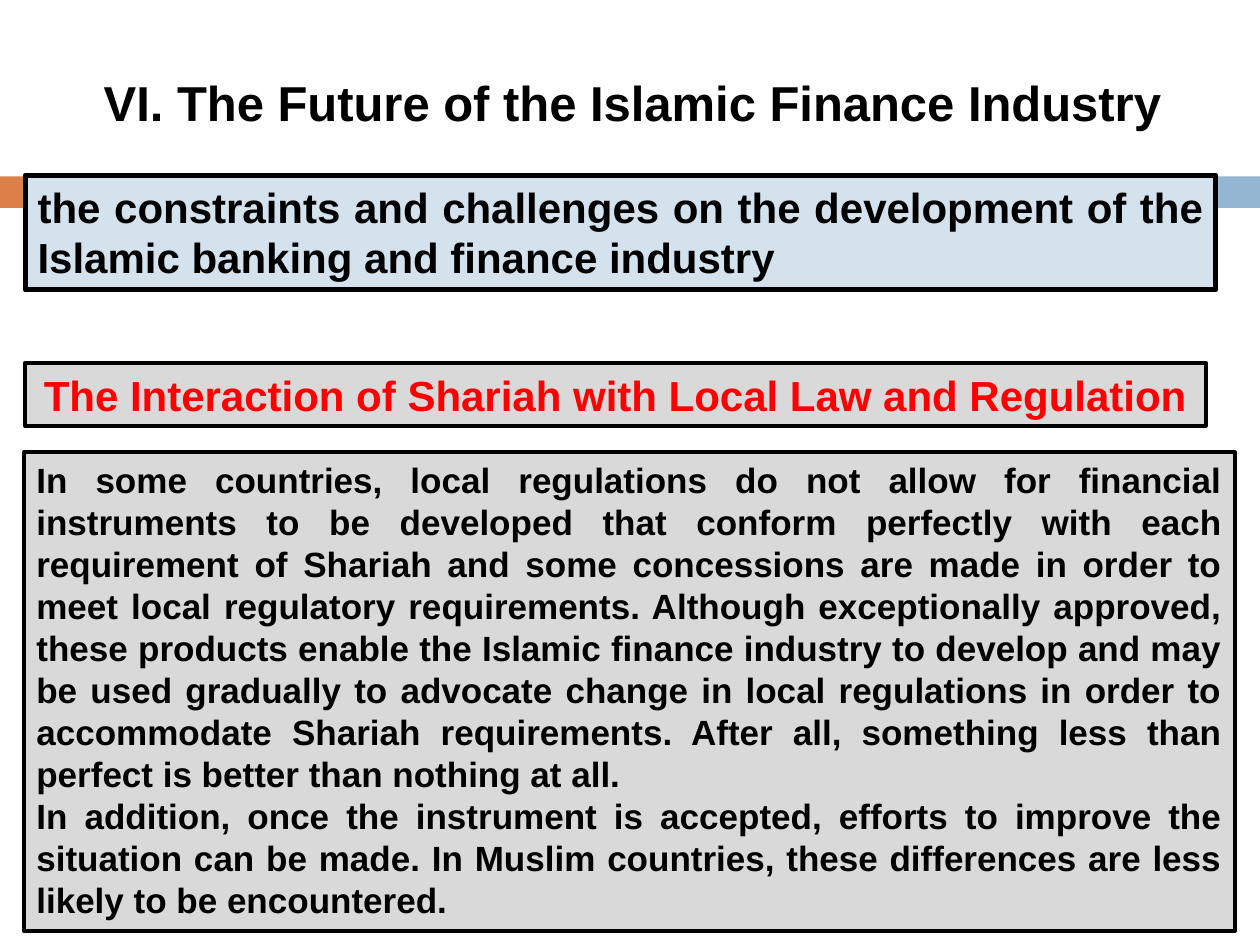
from pptx import Presentation, util as u
from pptx.dml.color import RGBColor
from pptx.enum import shapes, text

BLACK, RED, GREY = "000000", "FF0000", "D9D9D9"
CENTER, JUSTIFY = text.PP_ALIGN.CENTER, text.PP_ALIGN.JUSTIFY


def color(hex_value):
    return RGBColor.from_string(hex_value)


def write(frame, paragraphs, size, ink, align, anchor):
    frame.word_wrap = True
    frame.vertical_anchor = anchor
    for index, words in enumerate(paragraphs):
        paragraph = frame.paragraphs[0] if index == 0 else frame.add_paragraph()
        paragraph.text = words
        paragraph.alignment = align
        font = paragraph.runs[0].font
        for name, value in dict(name="Arial", size=u.Pt(size), bold=True).items():
            setattr(font, name, value)
        font.color.rgb = color(ink)


prs = Presentation()
prs.slide_width, prs.slide_height = u.Inches(10), u.Inches(7.5)
slide = prs.slides.add_slide(prs.slide_layouts[6])

# Coloured band under the title
for left, width, fill in [(0, 0.58, "DD8047"), (0.65, 9.35, "94B6D2")]:
    band = slide.shapes.add_shape(
        shapes.MSO_SHAPE.RECTANGLE,
        u.Inches(left), u.Inches(1.4), u.Inches(width), u.Inches(0.25))
    band.shadow.inherit = False
    band.fill.solid()
    band.fill.fore_color.rgb = color(fill)
    band.line.fill.background()

# Title
title = slide.shapes.add_textbox(
    u.Inches(0.56), u.Inches(0.27), u.Inches(8.92), u.Inches(1.08))
write(title.text_frame, ["VI. The Future of the Islamic Finance Industry"],
      28, BLACK, CENTER, text.MSO_ANCHOR.MIDDLE)

# Framed statements: place, fill, line width, text size, text colour, alignment, text
statements = [
    ((0.2, 1.39, 9.45, 0.91), "D4E2ED", 3, 24, BLACK, JUSTIFY, [
        "the constraints and challenges on the development of the Islamic "
        "banking and finance industry"]),
    ((0.2, 2.88, 9.37, 0.5), GREY, 2.25, 24, RED, CENTER, [
        "The Interaction of Shariah with Local Law and Regulation"]),
    ((0.19, 3.59, 9.61, 3.8), GREY, 2.25, 20, BLACK, JUSTIFY, [
        "In some countries, local regulations do not allow for financial "
        "instruments to be developed that conform perfectly with each "
        "requirement of Shariah and some concessions are made in order to "
        "meet local regulatory requirements. Although exceptionally approved, "
        "these products enable the Islamic finance industry to develop and may "
        "be used gradually to advocate change in local regulations in order to "
        "accommodate Shariah requirements. After all, something less than "
        "perfect is better than nothing at all.",
        "In addition, once the instrument is accepted, efforts to improve the "
        "situation can be made. In Muslim countries, these differences are less "
        "likely to be encountered."]),
]
for place, fill, line_width, size, ink, align, paragraphs in statements:
    statement = slide.shapes.add_shape(
        shapes.MSO_SHAPE.RECTANGLE, *(u.Inches(value) for value in place))
    statement.shadow.inherit = False
    statement.fill.solid()
    statement.fill.fore_color.rgb = color(fill)
    statement.line.color.rgb = color(BLACK)
    statement.line.width = u.Pt(line_width)
    write(statement.text_frame, paragraphs, size, ink, align, text.MSO_ANCHOR.TOP)

prs.save("out.pptx")
